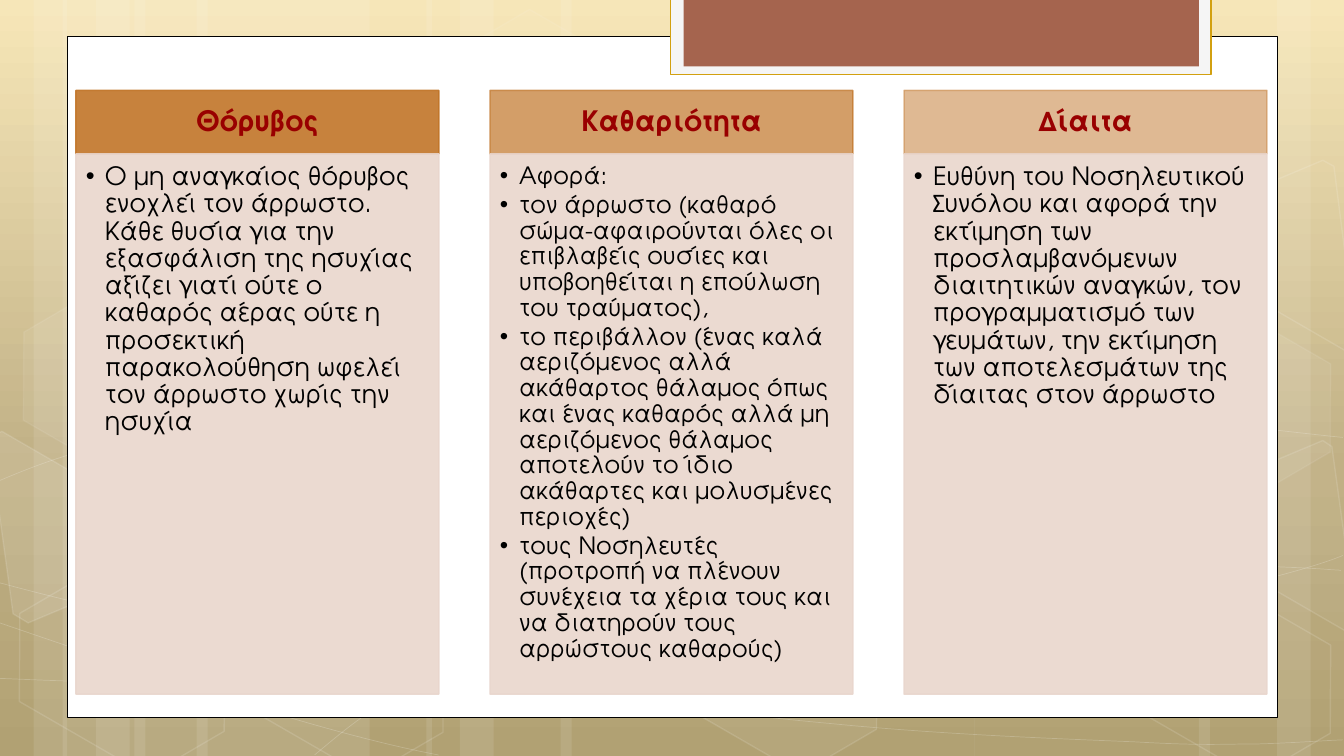
from lxml import etree
from pptx import Presentation
from pptx import util as u
from pptx.dml.color import RGBColor
from pptx.enum import shapes, text
from pptx.oxml import parse_xml
from pptx.oxml.ns import nsdecls, qn

SLIDE_WIDTH, SLIDE_HEIGHT = u.Inches(13.33), u.Inches(7.5)
UNIT = u.Inches(1) / 3
FONT = "TeX Gyre Adventor"

WHITE = RGBColor(0xFF, 0xFF, 0xFF)
BLACK = RGBColor(0x00, 0x00, 0x00)
TAB_EDGE = RGBColor(0xF5, 0xF5, 0xF5)
GOLD = RGBColor(0xD2, 0xA0, 0x10)
BRICK = RGBColor(0xA5, 0x64, 0x4E)
ORANGE = RGBColor(0xC1, 0x75, 0x29)
ROSE = RGBColor(0xE9, 0xD6, 0xCD)
DARK_RED = RGBColor(0x99, 0x00, 0x00)
SKY = [(0, RGBColor(0xF6, 0xE4, 0xB0)),
       (62, RGBColor(0xBA, 0xA8, 0x78)),
       (100, RGBColor(0xA9, 0x97, 0x64))]

STRIPES = [(4, 7), (0, 2), (1, 3.33), (5.85, 7), (1.86, 2), (2.85, 3.33),
           (29, 7), (38, 2), (35.67, 3.33), (16.68, 12.33), (12.69, 2), (13.68, 3.33)]
CURVES = [
    [(-0.03, 20.19), (2.13, 20.28), (4.29, 20.37), (7.29, 20.34),
     (10.29, 20.31), (13.98, 20.25), (17.97, 19.95),
     (21.99, 19.65), (27.66, 19.08), (31.35, 18.51),
     (35.01, 17.94), (38.76, 17.04), (39.96, 16.53)],
    [(-0.03, 14.31), (1.11, 13.83), (2.25, 13.38), (4.53, 12.93),
     (6.81, 12.48), (10.02, 11.82), (13.56, 11.61),
     (17.13, 11.4), (21.42, 11.37), (25.83, 11.61),
     (30.24, 11.85), (37.56, 12.78), (39.96, 13.02)],
    [(-0.09, 18.51), (4.74, 20.16), (9.57, 21.81), (13.05, 22.47)],
    [(-0.03, 17.34), (1.2, 17.67), (2.46, 18), (4.8, 18.48),
     (7.11, 18.93), (10.59, 19.68), (13.92, 20.19),
     (17.28, 20.7), (21.48, 21.24), (24.78, 21.54),
     (28.11, 21.87), (31.65, 21.99), (33.78, 22.08),
     (35.88, 22.2), (36.42, 22.14), (37.47, 22.14),
     (38.49, 22.11), (39.24, 22.05), (39.96, 22.02)],
    [(9.36, 22.47), (10.08, 21.87), (10.77, 21.27), (11.76, 20.73),
     (12.72, 20.19), (14.07, 19.59), (15.18, 19.17),
     (16.29, 18.75), (16.98, 18.57), (18.45, 18.27),
     (19.92, 17.97), (22.62, 17.55), (24, 17.34),
     (25.41, 17.13), (25.62, 17.13), (26.88, 17.07),
     (28.11, 16.98), (30.06, 16.89), (31.44, 16.86),
     (32.82, 16.83), (35.13, 16.86), (35.13, 16.86),
     (36, 16.86), (36.9, 16.86), (37.77, 16.86),
     (38.52, 16.89), (39.18, 16.92), (39.54, 16.95),
     (39.9, 16.98), (39.78, 16.95), (39.9, 16.98)],
]
HEXAGONS = [(13.02, 1.08, 4, 8), (19.53, 17.67, 6, 12), (0.12, 17.73, 0, 12),
            (0.24, 9.36, 7, 8), (6.63, 17.76, 0, 12), (33.03, 17.79, 0, 12),
            (33.03, 9.42, 7, 8)]
CUT_HEXAGONS = [
    ([(-0.33, 13.02), (0.06, 12.84), (3.12, 14.61), (3.48, 17.43),
      (0.84, 18.54), (0.39, 18.27)], 10),
    ([(36.72, 14.22), (39.36, 13.11), (39.63, 13.29), (40.38, 18.75),
      (40.14, 18.84), (37.08, 17.07)], 4),
    ([(36.72, 5.88), (39.36, 4.77), (39.69, 4.95), (40.38, 10.38),
      (40.14, 10.5), (37.08, 8.73)], 0),
]

TOPICS = [
    ("Θόρυβος", 90, 18, [
        "Ο μη αναγκαίος θόρυβος ενοχλεί τον άρρωστο. Κάθε θυσία για την εξασφάλιση της ησυχίας "
        "αξίζει γιατί ούτε ο καθαρός αέρας ούτε η προσεκτική παρακολούθηση ωφελεί τον άρρωστο "
        "χωρίς την ησυχία"]),
    ("Καθαριότητα", 70, 17, [
        "Aφορά:",
        "τον άρρωστο (καθαρό σώμα-αφαιρούνται όλες οι επιβλαβείς ουσίες και υποβοηθείται η "
        "επούλωση του τραύματος),",
        "το περιβάλλον (ένας καλά αεριζόμενος αλλά ακάθαρτος θάλαμος όπως και ένας καθαρός αλλά "
        "μη αεριζόμενος θάλαμος αποτελούν το ίδιο ακάθαρτες και μολυσμένες περιοχές)",
        "τους Νοσηλευτές (προτροπή να πλένουν συνέχεια τα χέρια τους και να διατηρούν τους "
        "αρρώστους καθαρούς)"]),
    ("Δίαιτα", 50, 18, [
        "Eυθύνη του Νοσηλευτικού Συνόλου και αφορά την εκτίμηση των προσλαμβανόμενων διαιτητικών "
        "αναγκών, τον προγραμματισμό των γευμάτων, την εκτίμηση των αποτελεσμάτων της δίαιτας "
        "στον άρρωστο"]),
]
TOPIC_LEFT, TOPIC_PITCH, TOPIC_WIDTH = 2.26, 12.32, 10.8
HEADER_TOP, HEADER_HEIGHT, BODY_HEIGHT = 2.69, 1.89, 16.08


def grid(value):
    return round(value * UNIT)


def set_color(fill, color, opacity):
    fill.solid()
    fill.fore_color.rgb = color
    if opacity < 100:
        node = fill._xPr.find(qn("a:solidFill")).find(qn("a:srgbClr"))
        etree.SubElement(node, qn("a:alpha"), val=str(opacity * 1000))


def paint(shape, fill=None, fill_opacity=100, line=None, width=1, line_opacity=100):
    shape.shadow.inherit = False
    if fill is not None and fill_opacity:
        set_color(shape.fill, fill, fill_opacity)
    else:
        shape.fill.background()
    if line is None:
        shape.line.fill.background()
    else:
        set_color(shape.line.fill, line, line_opacity)
        shape.line.width = u.Pt(width)


def add_preset(slide, kind, box, **style):
    shape = slide.shapes.add_shape(kind, *map(grid, box))
    paint(shape, **style)
    return shape


def add_rectangle(slide, box, **style):
    return add_preset(slide, shapes.MSO_SHAPE.RECTANGLE, box, **style)


def add_outline(slide, points, close, **style):
    corners = [(grid(x), grid(y)) for x, y in points]
    builder = slide.shapes.build_freeform(*corners[0])
    builder.add_line_segments(corners[1:], close=close)
    shape = builder.convert_to_shape()
    paint(shape, **style)
    return shape


def add_curve(slide, controls, **style):
    shape = add_outline(slide, controls, False, **style)
    segments = list(shape._element.iter(qn("a:lnTo")))
    for start in range(0, len(segments), 3):
        bezier = etree.Element(qn("a:cubicBezTo"))
        segments[start].addprevious(bezier)
        for segment in segments[start:start + 3]:
            bezier.append(segment[0])
            segment.getparent().remove(segment)


def set_background(slide):
    stops = "".join(f'<a:gs pos="{share * 1000}"><a:srgbClr val="{color}"/></a:gs>'
                    for share, color in SKY)
    fill = slide.background.fill
    fill.gradient()
    gradient = fill._xPr.find(qn("a:gradFill"))
    fill._xPr.replace(gradient, parse_xml(
        f'<a:gradFill {nsdecls("a")} rotWithShape="1"><a:gsLst>{stops}</a:gsLst>'
        '<a:lin ang="5400000" scaled="0"/></a:gradFill>'))


def add_bullet(paragraph):
    properties = paragraph._p.get_or_add_pPr()
    properties.set("marL", str(u.Inches(0.19)))
    properties.set("indent", str(-u.Inches(0.19)))
    etree.SubElement(properties, qn("a:buFont"), typeface="Arial")
    etree.SubElement(properties, qn("a:buChar"), char="•")


def write(shape, lines, size, color, insets, anchor, alignment, space_after, bold=False, bullets=False):
    frame = shape.text_frame
    frame.word_wrap = True
    frame.vertical_anchor = anchor
    frame.margin_left, frame.margin_top, frame.margin_right, frame.margin_bottom = map(grid, insets)
    frame.text = "\n".join(lines)
    for paragraph in frame.paragraphs:
        if bullets:
            add_bullet(paragraph)
        paragraph.alignment = alignment
        paragraph.line_spacing = 0.9
        paragraph.space_after = u.Pt(space_after)
        for run in paragraph.runs:
            run.font.name, run.font.size, run.font.bold = FONT, u.Pt(size), bold
            run.font.color.rgb = color


def add_topic(slide, index, heading, opacity, size, lines):
    left = TOPIC_LEFT + index * TOPIC_PITCH
    header = add_rectangle(slide, (left, HEADER_TOP, TOPIC_WIDTH, HEADER_HEIGHT),
                           fill=ORANGE, fill_opacity=opacity, line=ORANGE, line_opacity=opacity)
    write(header, [heading], 20, DARK_RED, (0.48, 0.27, 0.48, 0.27),
          text.MSO_ANCHOR.MIDDLE, text.PP_ALIGN.CENTER, 7, bold=True)
    body = add_rectangle(slide, (left, HEADER_TOP + HEADER_HEIGHT, TOPIC_WIDTH, BODY_HEIGHT),
                         fill=ROSE, fill_opacity=90, line=ROSE, line_opacity=90)
    write(body, lines, size, BLACK, (0.3, 0.3, 0.41, 0.47),
          text.MSO_ANCHOR.TOP, text.PP_ALIGN.LEFT, 2.3, bullets=True)


def add_backdrop(slide):
    set_background(slide)
    for left, width in STRIPES:
        add_rectangle(slide, (left, 0, width, 22.5), fill=WHITE, fill_opacity=10)
    for controls in CURVES:
        add_curve(slide, controls, line=WHITE, width=0.5, line_opacity=20)
    for left, top, opacity, line_opacity in HEXAGONS:
        hexagon = add_preset(slide, shapes.MSO_SHAPE.HEXAGON, (left, top, 7.02, 4.56), fill=WHITE,
                             fill_opacity=opacity, line=WHITE, line_opacity=line_opacity)
        hexagon.adjustments[0] = 0.285
        hexagon.rotation = 30
    for points, opacity in CUT_HEXAGONS:
        add_outline(slide, points, True, fill=WHITE, fill_opacity=opacity, line=WHITE, line_opacity=12)
    add_rectangle(slide, (2, 1.08, 36, 20.28), fill=WHITE, line=BLACK, width=0.5)
    add_rectangle(slide, (19.95, -0.06, 16.08, 2.28), fill=TAB_EDGE, line=GOLD)
    add_rectangle(slide, (20.34, -0.06, 15.33, 2.04), fill=BRICK)


def main():
    presentation = Presentation()
    presentation.slide_width, presentation.slide_height = SLIDE_WIDTH, SLIDE_HEIGHT
    slide = presentation.slides.add_slide(presentation.slide_layouts[6])
    add_backdrop(slide)
    for index, topic in enumerate(TOPICS):
        add_topic(slide, index, *topic)
    presentation.save("out.pptx")


if __name__ == "__main__":
    main()
